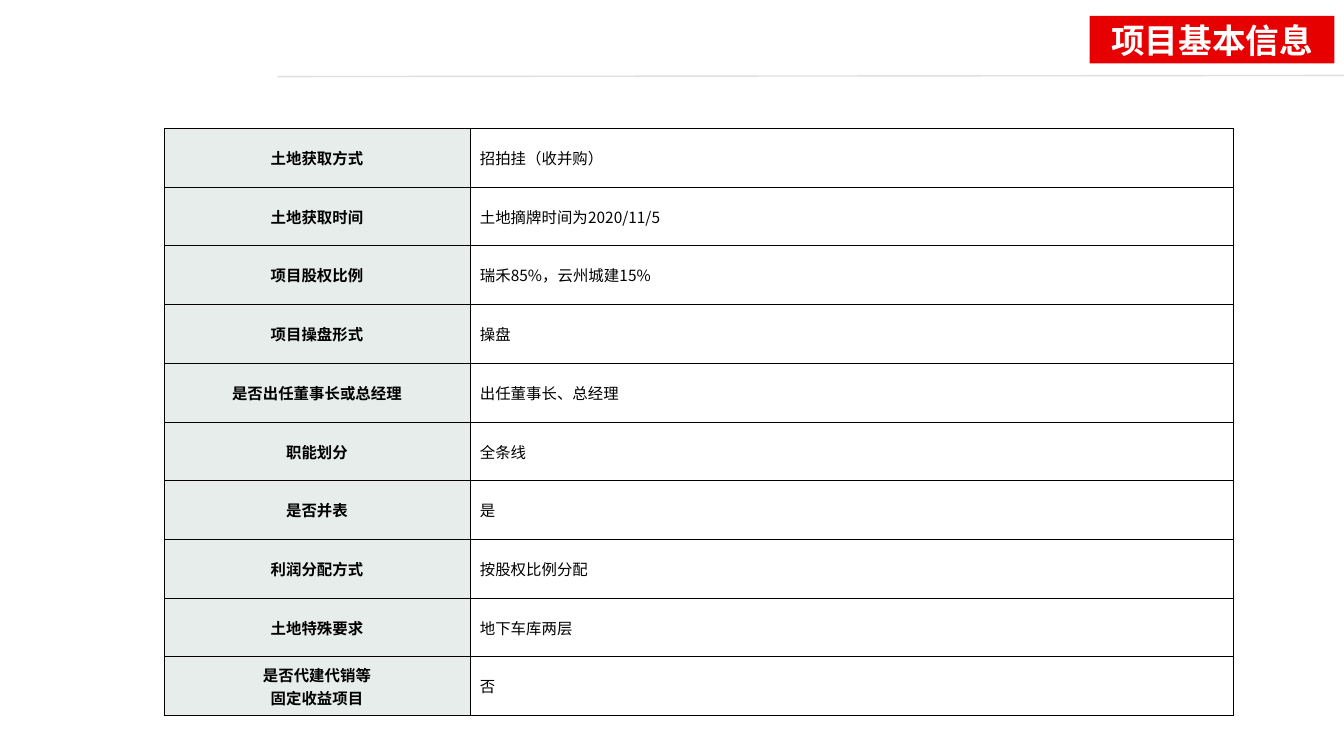
from dataclasses import dataclass

from lxml import etree
from pptx import Presentation
from pptx import util as u
from pptx.dml.color import RGBColor
from pptx.enum import shapes, text
from pptx.oxml import ns

FONT = "Noto Sans CJK SC"
BLACK, WHITE, RED, SILVER, PALE_GREEN = "000000", "FFFFFF", "E60000", "C0C0C0", "E7EDEA"
COLUMN_WIDTHS = (7.7, 19.25)
ROW_HEIGHT = 1.48


@dataclass
class Fact:
    label: str
    value: str


FACTS = [
    Fact("土地获取方式", "招拍挂（收并购）"),
    Fact("土地获取时间", "土地摘牌时间为2020/11/5"),
    Fact("项目股权比例", "瑞禾85%，云州城建15%"),
    Fact("项目操盘形式", "操盘"),
    Fact("是否出任董事长或总经理", "出任董事长、总经理"),
    Fact("职能划分", "全条线"),
    Fact("是否并表", "是"),
    Fact("利润分配方式", "按股权比例分配"),
    Fact("土地特殊要求", "地下车库两层"),
    Fact("是否代建代销等\n固定收益项目", "否"),
]


def colour(value: str) -> RGBColor:
    return RGBColor.from_string(value)


def add_element(parent, tag: str, **attributes: str):
    return etree.SubElement(parent, ns.qn(tag), attributes)


def paint(target, value: str) -> None:
    target.fill.solid()
    target.fill.fore_color.rgb = colour(value)


def write(frame, content: str, size: float, ink: str, bold: bool, align) -> None:
    """Fill a text frame with one paragraph per line, in the slide's font."""
    frame.text = content
    formats = {"size": u.Pt(size), "bold": bold, "name": FONT}
    for para in frame.paragraphs:
        para.alignment = align
        for span in para.runs:
            for name, value in formats.items():
                setattr(span.font, name, value)
            span.font.color.rgb = colour(ink)
            add_element(span.font._element, "a:ea", typeface=FONT)


def add_borders(cell) -> None:
    properties = cell._tc.get_or_add_tcPr()
    for side in ("L", "R", "T", "B"):
        border = add_element(properties, f"a:ln{side}", w=str(u.Pt(0.5)))
        fill = add_element(border, "a:solidFill")
        add_element(fill, "a:srgbClr", val=BLACK)


def add_rule(page) -> None:
    """Draw the half-transparent line below the title."""
    rule = page.shapes.add_connector(
        shapes.MSO_CONNECTOR.STRAIGHT, u.Cm(6.99), u.Cm(1.93), u.Cm(33.87), u.Cm(1.9))
    rule.line.width = u.Pt(1)
    rule.line.color.rgb = colour(SILVER)
    properties = rule._element.spPr
    add_element(properties.find(".//" + ns.qn("a:srgbClr")), "a:alpha", val="50000")
    add_element(properties, "a:effectLst")


def format_title(page) -> None:
    title = page.shapes.title
    place = {"left": 27.46, "top": 0.4, "width": 6.17, "height": 1.2}
    for name, value in place.items():
        setattr(title, name, u.Cm(value))
    paint(title, RED)
    frame = title.text_frame
    layout = {"auto_size": text.MSO_AUTO_SIZE.NONE, "word_wrap": True,
              "vertical_anchor": text.MSO_ANCHOR.MIDDLE,
              "margin_top": 0, "margin_bottom": 0}
    for name, value in layout.items():
        setattr(frame, name, value)
    write(frame, "项目基本信息", 24, WHITE, True, text.PP_ALIGN.CENTER)


def add_fact_table(page, facts: list[Fact]) -> None:
    table = page.shapes.add_table(
        len(facts), len(COLUMN_WIDTHS), u.Cm(4.14), u.Cm(3.23),
        u.Cm(sum(COLUMN_WIDTHS)), u.Cm(ROW_HEIGHT * len(facts))).table
    table.first_row = table.horz_banding = False
    for column, width in zip(table.columns, COLUMN_WIDTHS):
        column.width = u.Cm(width)
    for index, fact in enumerate(facts):
        table.rows[index].height = u.Cm(ROW_HEIGHT)
        label, value = table.cell(index, 0), table.cell(index, 1)
        for cell, fill in ((label, PALE_GREEN), (value, WHITE)):
            add_borders(cell)
            paint(cell, fill)
            cell.vertical_anchor = text.MSO_ANCHOR.MIDDLE
        write(label.text_frame, fact.label, 11, BLACK, True, text.PP_ALIGN.CENTER)
        write(value.text_frame, fact.value, 11, BLACK, False, text.PP_ALIGN.LEFT)


def main() -> None:
    deck = Presentation()
    deck.slide_width, deck.slide_height = u.Cm(33.87), u.Cm(19.05)
    title_only = deck.slide_layouts[5]
    page = deck.slides.add_slide(title_only)
    add_rule(page)
    format_title(page)
    add_fact_table(page, FACTS)
    deck.save("out.pptx")


if __name__ == "__main__":
    main()
